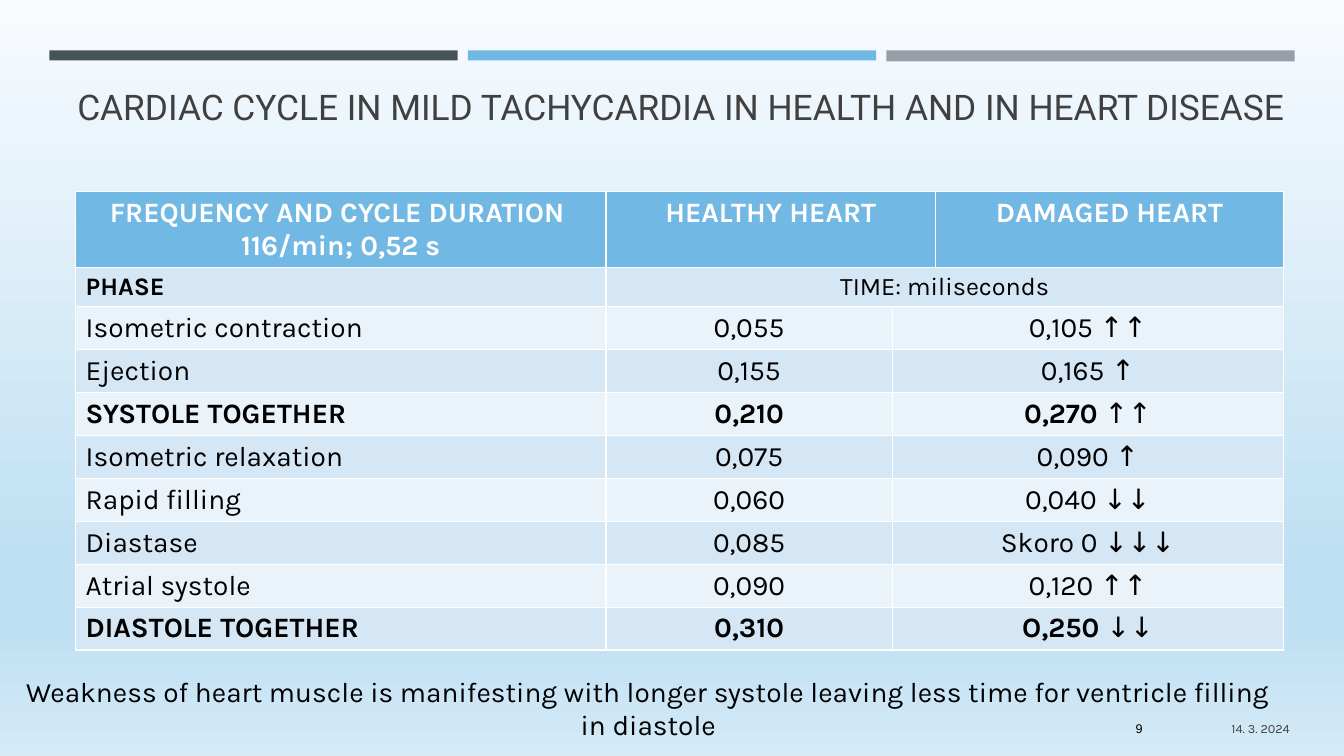
from lxml import etree
from pptx import Presentation
from pptx.dml.color import RGBColor
from pptx.enum.shapes import MSO_SHAPE
from pptx.enum.text import MSO_ANCHOR, PP_ALIGN
from pptx.oxml.ns import qn
from pptx.util import Inches, Pt

RECT = MSO_SHAPE.RECTANGLE
TOP, MIDDLE = MSO_ANCHOR.TOP, MSO_ANCHOR.MIDDLE
LEFT, CENTER, RIGHT = PP_ALIGN.LEFT, PP_ALIGN.CENTER, PP_ALIGN.RIGHT

BLACK, WHITE, GREY, BLUE = "000000", "FFFFFF", "404040", "71B9E4"
BANDS = ["D5E6F5", "EBF3FA"]
BACKGROUND = [(0, "F8FBFE"), (74, "BFE0F3"), (83, "BFE0F3"), (100, "D4EAF7")]

COLUMNS = [5.26, 2.84, 0.43, 3.45]
ROWS = [0.62, 0.35] + [0.4] * 8
# Phase, healthy time, damaged time, direction of change
PHASES = [
    ("Isometric contraction", "0,055", "0,105 ", "↑↑"),
    ("Ejection", "0,155", "0,165 ", "↑"),
    ("SYSTOLE TOGETHER", "0,210", "0,270 ", "↑↑"),
    ("Isometric relaxation", "0,075", "0,090 ", "↑"),
    ("Rapid filling", "0,060", "0,040 ", "↓↓"),
    ("Diastase", "0,085", "Skoro 0 ", "↓↓↓"),
    ("Atrial systole", "0,090", "0,120 ", "↑↑"),
    ("DIASTOLE TOGETHER", "0,310", "O,250 ", "↓↓"),
]


def rgb(color):
    return RGBColor.from_string(color)


def add_run(p, text, size, color, font="Karla", bold=False):
    r = p.add_run()
    r.text = text
    r.font.size = Pt(size)
    r.font.name = font
    r.font.bold = bold
    r.font.color.rgb = rgb(color)


def set_background(s):
    fill = s.background.fill
    fill.gradient()
    fill.gradient_angle = 270
    stops = s.element.find(".//" + qn("a:gsLst"))
    for stop in list(stops):
        stops.remove(stop)
    for position, color in BACKGROUND:
        stop = etree.SubElement(stops, qn("a:gs"), pos=str(position * 1000))
        etree.SubElement(stop, qn("a:srgbClr"), val=color)


def add_bar(s, left, height, color):
    sp = s.shapes.add_shape(RECT, Inches(left), Inches(0.5), Inches(4.05), Inches(height))
    sp.shadow.inherit = False
    sp.fill.solid()
    sp.fill.fore_color.rgb = rgb(color)
    sp.line.fill.background()


def set_title(s, text):
    title = s.shapes.title
    title.left, title.top = Inches(0.64), Inches(0.8)
    title.width, title.height = Inches(12.23), Inches(0.75)
    tf = title.text_frame
    tf.word_wrap = True
    tf.vertical_anchor = TOP
    tf.paragraphs[0].alignment = CENTER
    add_run(tf.paragraphs[0], text, 25.2, GREY, "Roboto")


def add_text(s, box, text, size, color, align, anchor=TOP, font="Karla"):
    tf = s.shapes.add_textbox(*map(Inches, box)).text_frame
    tf.word_wrap = True
    tf.vertical_anchor = anchor
    tf.paragraphs[0].alignment = align
    add_run(tf.paragraphs[0], text, size, color, font)


def fill_cell(cell, lines, fill, align=CENTER, size=20, color=BLACK):
    """Each line is a list of (text, bold) runs."""
    cell.fill.solid()
    cell.fill.fore_color.rgb = rgb(fill)
    tf = cell.text_frame
    for i, runs in enumerate(lines):
        p = tf.add_paragraph() if i else tf.paragraphs[0]
        p.alignment = align
        for text, bold in runs:
            add_run(p, text, size, color, bold=bold)


def add_phase_table(s):
    table = s.shapes.add_table(len(ROWS), len(COLUMNS), Inches(0.75), Inches(1.9),
                               Inches(sum(COLUMNS)), Inches(sum(ROWS))).table
    for column, width in zip(table.columns, COLUMNS):
        column.width = Inches(width)
    for row, height in zip(table.rows, ROWS):
        row.height = Inches(height)

    # Header
    table.cell(0, 1).merge(table.cell(0, 2))
    headers = [(0, ["FREQUENCY AND CYCLE DURATION ", "116/min; 0,52 s"]),
               (1, ["HEALTHY HEART"]), (3, ["DAMAGED HEART"])]
    for col, lines in headers:
        fill_cell(table.cell(0, col), [[(line, True)] for line in lines], BLUE, color=WHITE)

    # Units
    table.cell(1, 1).merge(table.cell(1, 3))
    fill_cell(table.cell(1, 0), [[("PHASE", True)]], BANDS[0], LEFT, 18)
    fill_cell(table.cell(1, 1), [[("TIME: miliseconds", False)]], BANDS[0], size=18)

    # Phases, with the totals in bold
    for row, (phase, healthy, damaged, change) in enumerate(PHASES, 2):
        band = BANDS[(row - 1) % 2]
        bold = phase.isupper()
        table.cell(row, 2).merge(table.cell(row, 3))
        fill_cell(table.cell(row, 0), [[(phase, bold)]], band, LEFT)
        fill_cell(table.cell(row, 1), [[(healthy, bold)]], band)
        fill_cell(table.cell(row, 2), [[(damaged, bold), (change, False)]], band)


def main():
    prs = Presentation()
    prs.slide_width, prs.slide_height = Inches(13.33), Inches(7.5)
    s = prs.slides.add_slide(prs.slide_layouts[5])
    set_background(s)

    # Top bars
    for left, height, color in [(0.49, 0.1, "465359"), (4.64, 0.1, BLUE),
                                (8.79, 0.11, "969FA7")]:
        add_bar(s, left, height, color)

    set_title(s, "CARDIAC CYCLE IN MILD TACHYCARDIA IN HEALTH AND IN HEART DISEASE")
    add_phase_table(s)

    # Conclusion, slide number and date
    add_text(s, (0.13, 6.64, 12.6, 0.77),
             "Weakness of heart muscle is manifesting with longer systole "
             "leaving less time for ventricle filling in diastole", 20, BLACK, CENTER)
    add_text(s, (8.32, 7.03, 3.11, 0.4), "9", 9, BLACK, RIGHT, MIDDLE, "Arial")
    add_text(s, (8.32, 7.03, 4.57, 0.4), "14. 3. 2024", 9, GREY, RIGHT, MIDDLE)
    prs.save("out.pptx")


if __name__ == "__main__":
    main()
